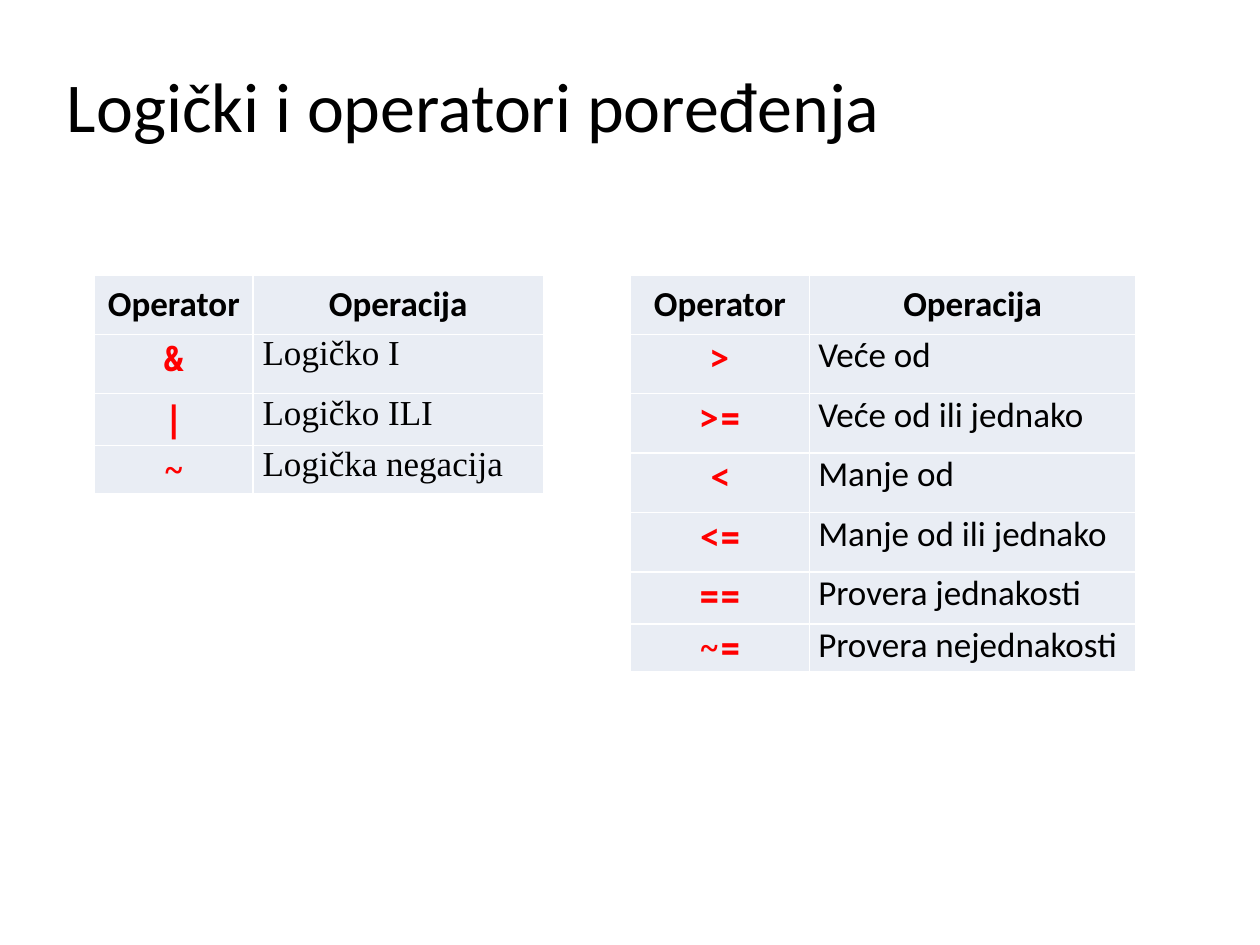
from dataclasses import dataclass

from lxml import etree
from pptx import Presentation
from pptx.dml.color import RGBColor
from pptx.enum.text import MSO_ANCHOR, PP_ALIGN
from pptx.oxml.ns import qn
from pptx.util import Pt

LEFT, CENTER = PP_ALIGN.LEFT, PP_ALIGN.CENTER
TOP, MIDDLE = MSO_ANCHOR.TOP, MSO_ANCHOR.MIDDLE
BODY, MONO, SERIF = "Calibri", "Noto Sans Mono", "Times New Roman"
BLACK, RED, WHITE, PALE = "000000", "FF0000", "FFFFFF", "E9EDF4"
HEADER = ("Operator", "Operacija")
ROW_H, NEXT_TO_LAST_H, LAST_H = 34, 29.7, 23.8
TABLE_TOP = 157


@dataclass
class OperatorTable:
    left: float
    widths: tuple[float, float]
    inset: float
    font: str
    rows: list[tuple[str, str]]


TABLES = [
    OperatorTable(54, (90.7, 165.8), 5.4, SERIF, [
        ("&", "Logičko I"),
        ("|", "Logičko ILI"),
        ("~", "Logička negacija"),
    ]),
    OperatorTable(360.3, (102.2, 186.6), 5.1, BODY, [
        (">", "Veće od"),
        (">=", "Veće od ili jednako"),
        ("<", "Manje od"),
        ("<=", "Manje od ili jednako"),
        ("==", "Provera jednakosti"),
        ("~=", "Provera nejednakosti"),
    ]),
]


def rgb(color: str) -> RGBColor:
    return RGBColor.from_string(color)


def format_text(p, font: str, size: float, color: str, bold: bool, align) -> None:
    p.alignment = align
    for r in p.runs:
        r.font.name = font
        r.font.size = Pt(size)
        r.font.bold = bold
        r.font.color.rgb = rgb(color)


def add_borders(cell, color: str, width: float) -> None:
    tc_pr = cell._tc.get_or_add_tcPr()
    for i, side in enumerate(("lnL", "lnR", "lnT", "lnB")):
        ln = etree.Element(qn(f"a:{side}"), w=str(Pt(width)))
        fill = etree.SubElement(ln, qn("a:solidFill"))
        etree.SubElement(fill, qn("a:srgbClr"), val=color)
        tc_pr.insert(i, ln)


def fill_cell(cell, text: str, font: str, color: str, bold: bool, align,
              inset: float, anchor, gap: float) -> None:
    cell.margin_left = cell.margin_right = Pt(inset)
    cell.margin_top = cell.margin_bottom = Pt(0)
    cell.vertical_anchor = anchor
    cell.fill.solid()
    cell.fill.fore_color.rgb = rgb(PALE)
    add_borders(cell, WHITE, 1)
    p = cell.text_frame.paragraphs[0]
    p.text = text
    p.space_before = p.space_after = Pt(gap)
    format_text(p, font, 20, color, bold, align)


def add_operator_table(s, t: OperatorTable) -> None:
    heights = [ROW_H] * (len(t.rows) - 1) + [NEXT_TO_LAST_H, LAST_H]
    table = s.shapes.add_table(len(heights), 2, Pt(t.left), Pt(TABLE_TOP),
                               Pt(sum(t.widths)), Pt(sum(heights))).table
    for col, width in zip(table.columns, t.widths):
        col.width = Pt(width)
    for row, height in zip(table.rows, heights):
        row.height = Pt(height)
    for c, text in enumerate(HEADER):
        fill_cell(table.cell(0, c), text, BODY, BLACK, True, CENTER, 2.7, MIDDLE, 0)
    for i, (operator, operation) in enumerate(t.rows, 1):
        fill_cell(table.cell(i, 0), operator, MONO, RED, True, CENTER, t.inset, TOP, 1)
        fill_cell(table.cell(i, 1), operation, t.font, BLACK, False, LEFT, t.inset, TOP, 1)


def add_title(s, text: str) -> None:
    title = s.shapes.title
    title.left, title.top, title.width, title.height = Pt(31), Pt(15), Pt(612), Pt(90)
    tf = title.text_frame
    tf.text = text
    tf.vertical_anchor = MIDDLE
    format_text(tf.paragraphs[0], BODY, 40, BLACK, False, LEFT)


def main() -> None:
    """Build the slide of logical and comparison operators."""
    prs = Presentation()
    prs.slide_width, prs.slide_height = Pt(720), Pt(540)
    s = prs.slides.add_slide(prs.slide_layouts[5])
    add_title(s, "Logički i operatori poređenja")
    for t in TABLES:
        add_operator_table(s, t)
    prs.save("out.pptx")


if __name__ == "__main__":
    main()
